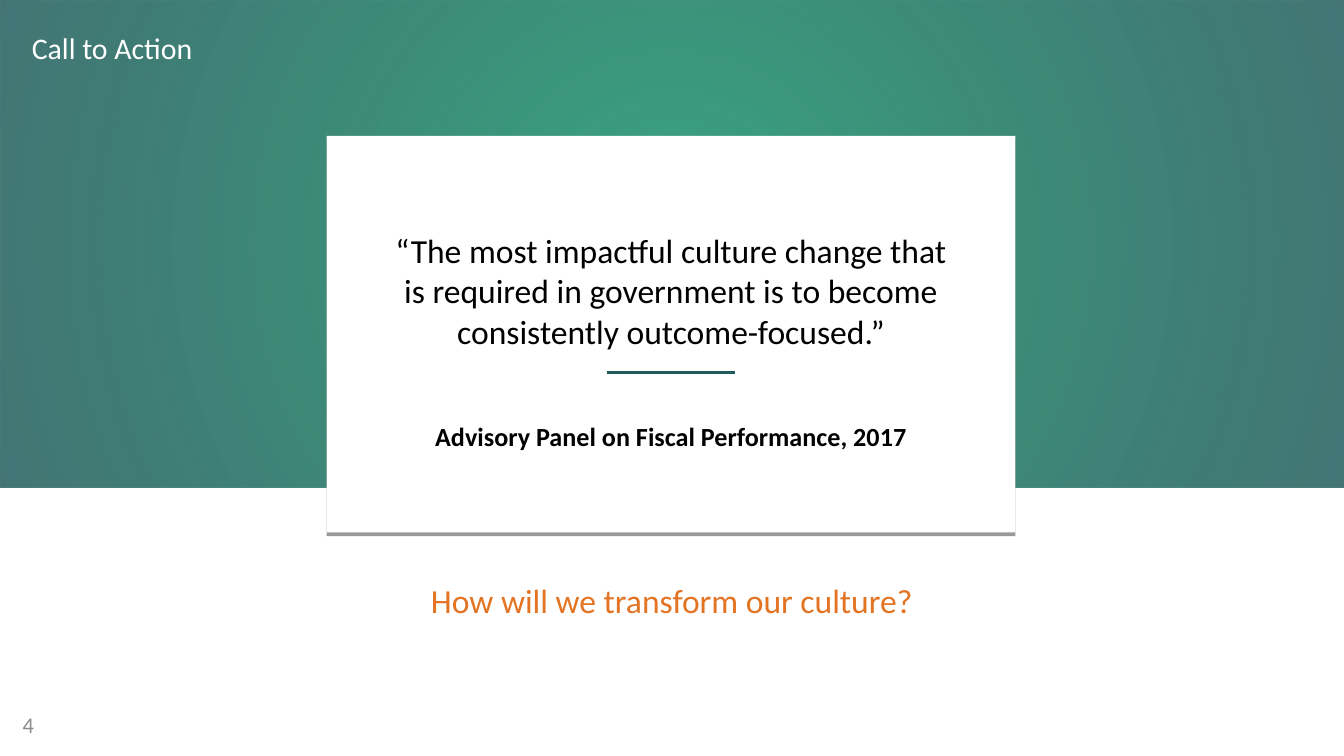
from pptx import Presentation
from pptx.dml.color import RGBColor
from pptx.enum.shapes import MSO_CONNECTOR, MSO_SHAPE
from pptx.enum.text import MSO_ANCHOR, PP_ALIGN
from pptx.oxml import parse_xml
from pptx.oxml.ns import nsdecls, qn
from pptx.util import Pt

WIDTH, HEIGHT = 720, 405
HEX = {
    "white": "FFFFFF", "black": "000000", "gray": "D9D9D9", "page": "8C8C8C",
    "green": "3BA780", "teal": "1F5D5D", "orange": "E37423",
}


def color(name):
    return RGBColor.from_string(HEX[name])


def add_text(slide, text, box, size=18, ink="black", bold=False,
             align=PP_ALIGN.LEFT, anchor=MSO_ANCHOR.TOP, wrap=True):
    frame = slide.shapes.add_textbox(*map(Pt, box)).text_frame
    frame.word_wrap = wrap
    frame.vertical_anchor = anchor
    para = frame.paragraphs[0]
    para.alignment = align
    run = para.add_run()
    run.text = text
    font = run.font
    font.name, font.size, font.bold = "Calibri", Pt(size), bold
    font.color.rgb = color(ink)


def add_rect(slide, box, fill):
    rect = slide.shapes.add_shape(MSO_SHAPE.RECTANGLE, *map(Pt, box))
    rect.shadow.inherit = False
    rect.fill.solid()
    rect.fill.fore_color.rgb = color(fill)
    rect.line.fill.background()
    return rect


def add_glow(rect):
    """Swap the solid fill for a radial one, see-through at the rim."""
    props = rect.element.spPr
    glow = parse_xml(
        f'<a:gradFill {nsdecls("a")} rotWithShape="1"><a:gsLst>'
        f'<a:gs pos="1000"><a:srgbClr val="{HEX["green"]}"/></a:gs>'
        f'<a:gs pos="100000"><a:srgbClr val="{HEX["teal"]}">'
        '<a:alpha val="80000"/></a:srgbClr></a:gs></a:gsLst>'
        '<a:path path="circle"><a:fillToRect l="50000" t="50000" '
        'r="50000" b="50000"/></a:path></a:gradFill>')
    props.replace(props.find(qn("a:solidFill")), glow)


def add_shadow(rect):
    effects = rect.element.spPr.find(qn("a:effectLst"))
    effects.append(parse_xml(
        f'<a:outerShdw {nsdecls("a")} blurRad="0" dist="{Pt(2)}" '
        f'dir="5400000" rotWithShape="0"><a:srgbClr val="{HEX["black"]}">'
        '<a:alpha val="40000"/></a:srgbClr></a:outerShdw>'))


def add_rule(slide, mid, y, width):
    rule = slide.shapes.add_connector(
        MSO_CONNECTOR.STRAIGHT, Pt(mid - width / 2), Pt(y),
        Pt(mid + width / 2), Pt(y))
    rule.line.color.rgb = color("teal")
    rule.line.width = Pt(1.5)
    rule.element.spPr.append(parse_xml(f'<a:effectLst {nsdecls("a")}/>'))


def add_banner(slide, box, title):
    add_rect(slide, box, "gray")
    add_glow(add_rect(slide, box, "green"))
    left, top = box[:2]
    add_text(slide, title, (left + 10, top + 12.2, 233, 27), size=16,
             ink="white")


def add_quote(slide, box, quote, source):
    left, top, width, height = box
    mid = left + width / 2
    add_shadow(add_rect(slide, box, "white"))
    add_text(slide, quote, (mid - 161, top + 46.8, 322, 90),
             align=PP_ALIGN.CENTER)
    add_rule(slide, mid, top + 126.7, 69)
    add_text(slide, source, (mid - 134.5, top + 149, 269, 24.5), size=14,
             bold=True, align=PP_ALIGN.CENTER, wrap=False)


def add_footer(slide, box, question, number):
    left, top, width, height = box
    add_text(slide, question, (left + 31.5, top + 46, width - 63, 29),
             ink="orange", align=PP_ALIGN.CENTER)
    add_text(slide, number, (left + 5, top + height - 27.5, 168, 21.5),
             size=12, ink="page", anchor=MSO_ANCHOR.MIDDLE)


def main():
    deck = Presentation()
    deck.slide_width, deck.slide_height = Pt(WIDTH), Pt(HEIGHT)
    slide = deck.slides.add_slide(deck.slide_layouts[6])
    split = 261.4
    add_banner(slide, (0, 0, WIDTH, split), "Call to Action")
    add_footer(slide, (0, split, WIDTH, HEIGHT - split),
               "How will we transform our culture?", "4")
    add_quote(slide, (175, 72.8, 369, 212.4),
              "“The most impactful culture change that is required in "
              "government is to become consistently outcome-focused.”",
              "Advisory Panel on Fiscal Performance, 2017")
    deck.save("out.pptx")


if __name__ == "__main__":
    main()
